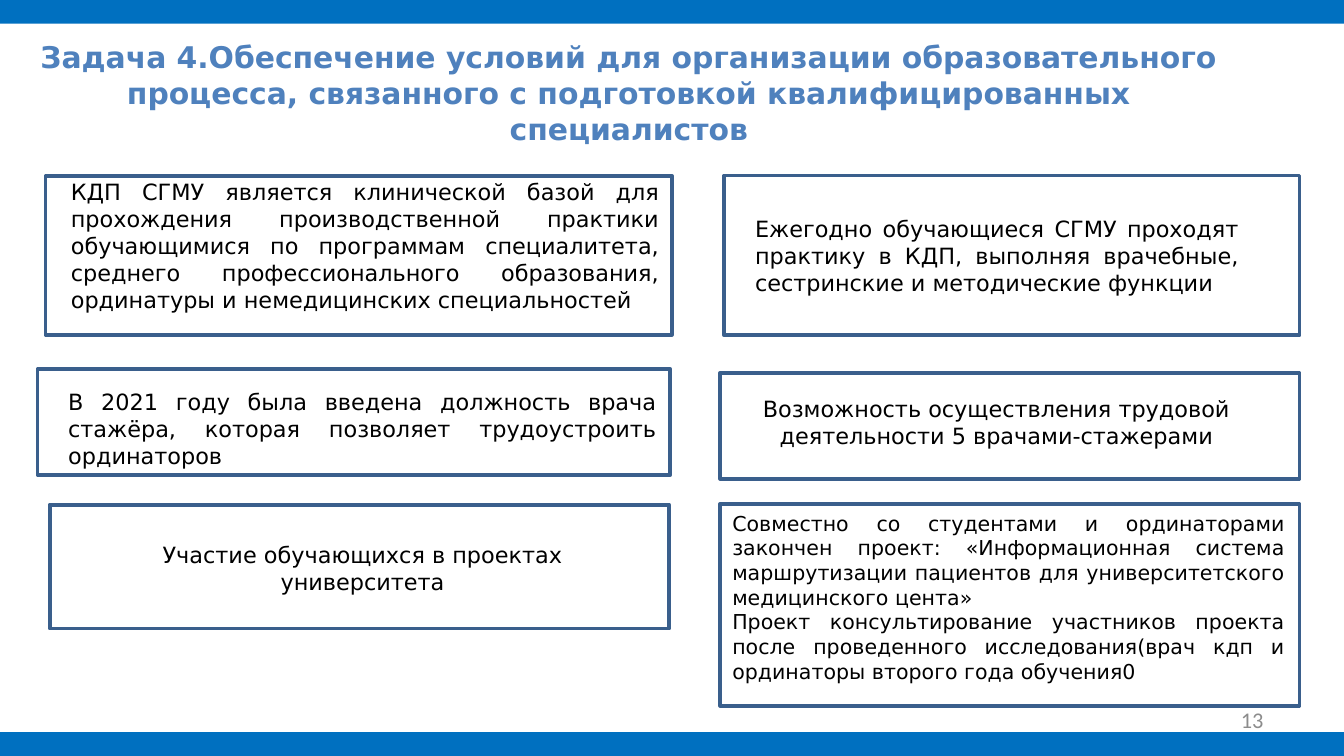
from pptx import Presentation
from pptx.dml.color import RGBColor
from pptx.enum.shapes import MSO_SHAPE as Shape
from pptx.enum.text import MSO_ANCHOR as Anchor, MSO_AUTO_SIZE as AutoSize, PP_ALIGN as Align
from pptx.util import Cm, Pt

COLORS = {"band": "0070C0", "title": "4F81BD", "frame": "3A5F8C",
          "text": "000000", "number": "8C8C8C"}
FONT = "DejaVu Sans"


def add_rectangle(left, top, width, height):
    box = page.shapes.add_shape(Shape.RECTANGLE, Cm(left), Cm(top), Cm(width), Cm(height))
    box.shadow.inherit = False
    return box


def write(box, paragraphs, size, color, align, font=FONT, bold=False, anchor=Anchor.TOP):
    frame = box.text_frame
    frame.word_wrap = True
    frame.auto_size = AutoSize.NONE
    frame.vertical_anchor = anchor
    for index, text in enumerate(paragraphs):
        para = frame.add_paragraph() if index else frame.paragraphs[0]
        para.alignment = align
        span = para.add_run()
        span.text = text
        span.font.size = Pt(size)
        span.font.name = font
        span.font.bold = bold
        span.font.color.rgb = RGBColor.from_string(COLORS[color])


deck = Presentation()
deck.slide_width, deck.slide_height = Cm(25.4), Cm(14.29)
page = deck.slides.add_slide(deck.slide_layouts[5])

# Bands along the top and bottom edges
for top in (0, 13.84):
    band = add_rectangle(0, top, 25.4, 0.45)
    band.fill.solid()
    band.fill.fore_color.rgb = RGBColor.from_string(COLORS["band"])
    band.line.fill.background()

# Title
title = page.shapes.title
title.left, title.top, title.width, title.height = Cm(0), Cm(0.74), Cm(23.77), Cm(2.01)
write(title, ["Задача 4.Обеспечение условий для организации образовательного процесса, "
              "связанного с подготовкой квалифицированных специалистов"],
      16, "title", Align.CENTER, bold=True, anchor=Anchor.MIDDLE)

# Framed statements: frame place, text place, size, alignment, paragraphs
statements = [
    ((0.86, 3.33, 11.84, 3), (1.09, 3.25, 11.63, 2.79), 12, Align.JUSTIFY,
     ["КДП СГМУ является клинической базой для прохождения производственной практики "
      "обучающимися по программам специалитета, среднего профессионального образования, "
      "ординатуры и немедицинских специальностей"]),
    ((13.69, 3.32, 10.87, 3.02), (14.02, 3.94, 9.65, 1.8), 12, Align.JUSTIFY,
     ["Ежегодно обучающиеся СГМУ проходят практику в КДП, выполняя врачебные, "
      "сестринские и методические функции"]),
    ((0.71, 6.98, 11.96, 2), (1.04, 7.21, 11.63, 1.8), 12, Align.JUSTIFY,
     ["В 2021 году была введена должность врача стажёра, которая позволяет "
      "трудоустроить ординаторов"]),
    ((13.61, 7.05, 10.95, 2), (14.02, 7.34, 9.63, 1.27), 12, Align.CENTER,
     ["Возможность осуществления трудовой деятельности 5 врачами-стажерами"]),
    ((0.94, 9.54, 11.71, 2.34), (1.32, 10.11, 11.07, 1.27), 12, Align.CENTER,
     ["Участие обучающихся в проектах университета"]),
    ((13.61, 9.53, 10.95, 3.81), (13.59, 9.53, 10.95, 3.56), 11, Align.JUSTIFY,
     ["Совместно со студентами и ординаторами закончен проект: «Информационная система "
      "маршрутизации пациентов для университетского медицинского цента»",
      "Проект консультирование участников проекта после проведенного исследования"
      "(врач кдп и ординаторы второго года обучения0"]),
]
for frame_place, text_place, size, align, paragraphs in statements:
    outline = add_rectangle(*frame_place)
    outline.fill.background()
    outline.line.color.rgb = RGBColor.from_string(COLORS["frame"])
    outline.line.width = Pt(2)
    label = page.shapes.add_textbox(*map(Cm, text_place))
    write(label, paragraphs, size, "text", align)

# Page number
number = page.shapes.add_textbox(Cm(18.21), Cm(13.23), Cm(5.92), Cm(0.76))
write(number, ["13"], 12, "number", Align.RIGHT, font="Calibri", anchor=Anchor.MIDDLE)

deck.save("out.pptx")
